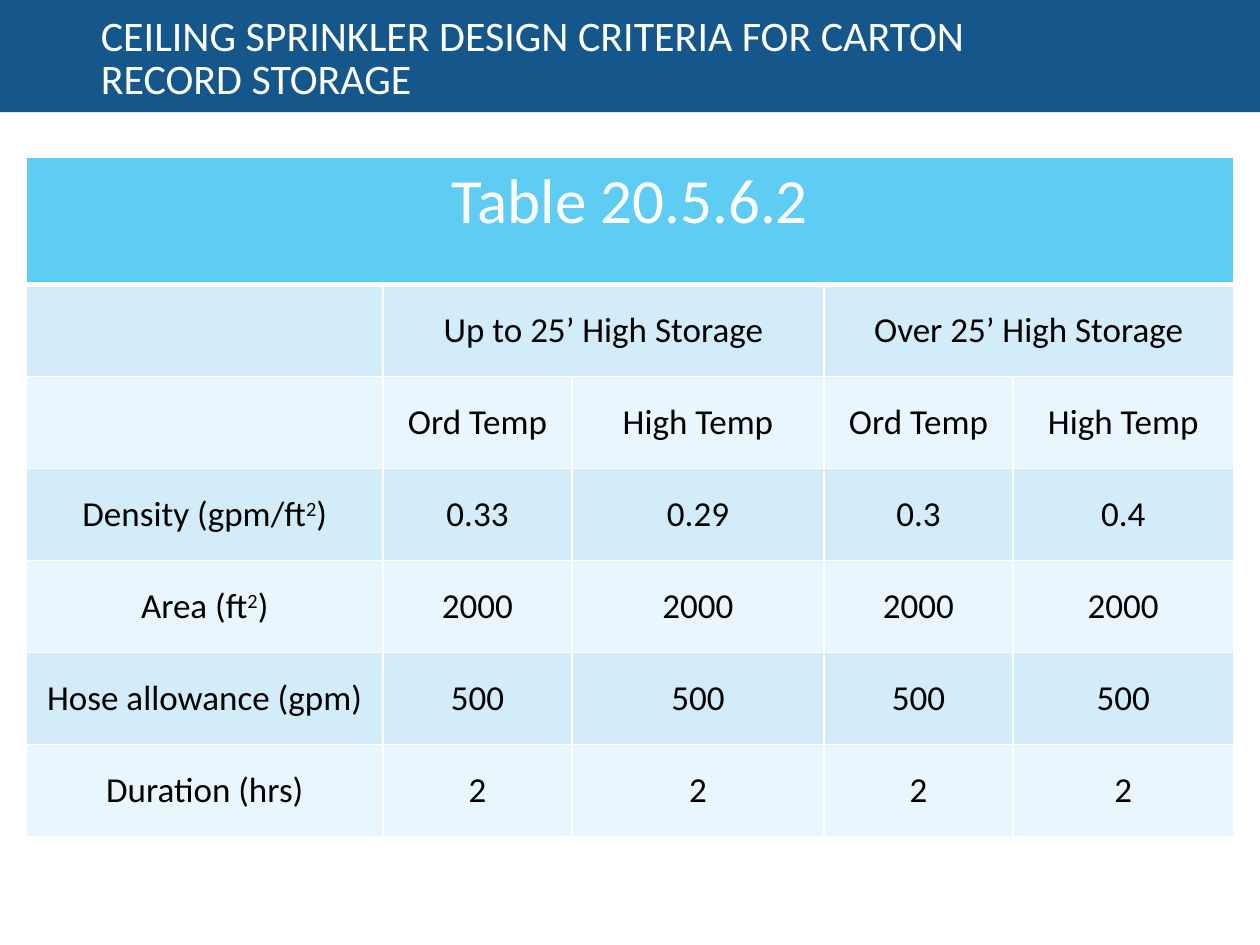
from lxml.etree import SubElement
from pptx import Presentation
from pptx.dml.color import RGBColor
from pptx.enum.shapes import MSO_SHAPE
from pptx.enum.text import MSO_ANCHOR, PP_ALIGN
from pptx.oxml.ns import qn
from pptx.util import Inches, Pt

NAVY, SKY, WHITE, BLACK = "15578A", "5ECCF3", "FFFFFF", "000000"
BANDS = ("EAF6FD", "D2ECFA")
COLUMN_WIDTHS = (2.83, 1.5, 2, 1.5, 1.75)
HEADER_HEIGHT, ROW_HEIGHT = 1.01, 0.73
MERGES = ((0, 0, 4), (1, 1, 2), (1, 3, 4))
CRITERIA = (
    ("Table 20.5.6.2", "", "", "", ""),
    ("", "Up to 25’ High Storage", "", "Over 25’ High Storage", ""),
    ("", "Ord Temp", "High Temp", "Ord Temp", "High Temp"),
    ("Density (gpm/ft^2^)", "0.33", "0.29", "0.3", "0.4"),
    ("Area (ft^2^)", "2000", "2000", "2000", "2000"),
    ("Hose allowance (gpm)", "500", "500", "500", "500"),
    ("Duration (hrs)", "2", "2", "2", "2"),
)


def color(value):
    return RGBColor.from_string(value)


class SlideBuilder:
    """Holds the style and the current slide, and adds each kind of element."""

    font_name = "Calibri"

    def __init__(self, deck):
        self.page = deck.slides.add_slide(deck.slide_layouts[5])

    def style(self, para, size, ink, align):
        para.alignment = align
        para.font.name = self.font_name
        para.font.size = Pt(size)
        para.font.color.rgb = color(ink)

    def title(self, text, left, top, width, height):
        box = self.page.shapes.title
        box.left, box.top = Inches(left), Inches(top)
        box.width, box.height = Inches(width), Inches(height)
        frame = box.text_frame
        frame.text = text
        frame.word_wrap = True
        frame.vertical_anchor = MSO_ANCHOR.MIDDLE
        para = frame.paragraphs[0]
        para.line_spacing = 0.85
        self.style(para, 24, WHITE, PP_ALIGN.LEFT)

    def title_bar(self, width, height):
        bar = self.page.shapes.add_shape(
            MSO_SHAPE.RECTANGLE, 0, 0, Inches(width), Inches(height))
        bar.shadow.inherit = False
        bar.fill.solid()
        bar.fill.fore_color.rgb = color(NAVY)
        bar.line.fill.background()
        self.page.shapes.title.element.addprevious(bar.element)

    def borders(self, cell, bottom):
        properties = cell._tc.get_or_add_tcPr()
        for side, width in (("L", 1), ("R", 1), ("T", 1), ("B", bottom)):
            line = SubElement(properties, qn(f"a:ln{side}"), w=str(Pt(width)))
            fill = SubElement(line, qn("a:solidFill"))
            SubElement(fill, qn("a:srgbClr"), val=WHITE)

    def cell(self, cell, text, header, band):
        self.borders(cell, 3 if header else 1)
        cell.fill.solid()
        cell.fill.fore_color.rgb = color(SKY if header else band)
        cell.vertical_anchor = MSO_ANCHOR.TOP if header else MSO_ANCHOR.MIDDLE
        para = cell.text_frame.paragraphs[0]
        if text:
            for index, part in enumerate(text.split("^")):
                span = para.add_run()
                span.text = part
                if index % 2:
                    span._r.get_or_add_rPr().set("baseline", "30000")
        self.style(para, 36 if header else 20, WHITE if header else BLACK,
                   PP_ALIGN.CENTER)

    def table(self, rows, left, top):
        height = HEADER_HEIGHT + ROW_HEIGHT * (len(rows) - 1)
        table = self.page.shapes.add_table(
            len(rows), len(COLUMN_WIDTHS), Inches(left), Inches(top),
            Inches(sum(COLUMN_WIDTHS)), Inches(height)).table
        for column, width in zip(table.columns, COLUMN_WIDTHS):
            column.width = Inches(width)
        for number, texts in enumerate(rows):
            header = number == 0
            table.rows[number].height = Inches(HEADER_HEIGHT if header else ROW_HEIGHT)
            for column, text in enumerate(texts):
                self.cell(table.cell(number, column), text, header, BANDS[number % 2])
        for row, first, last in MERGES:
            table.cell(row, first).merge(table.cell(row, last))


def main():
    deck = Presentation()
    deck.slide_width, deck.slide_height = Inches(10), Inches(7.5)
    slide = SlideBuilder(deck)
    slide.title("CEILING SPRINKLER DESIGN CRITERIA FOR CARTON RECORD STORAGE",
                0.7, 0.15, 8.03, 0.66)
    slide.title_bar(10, 0.89)
    slide.table(CRITERIA, 0.21, 1.25)
    deck.save("out.pptx")


if __name__ == "__main__":
    main()
